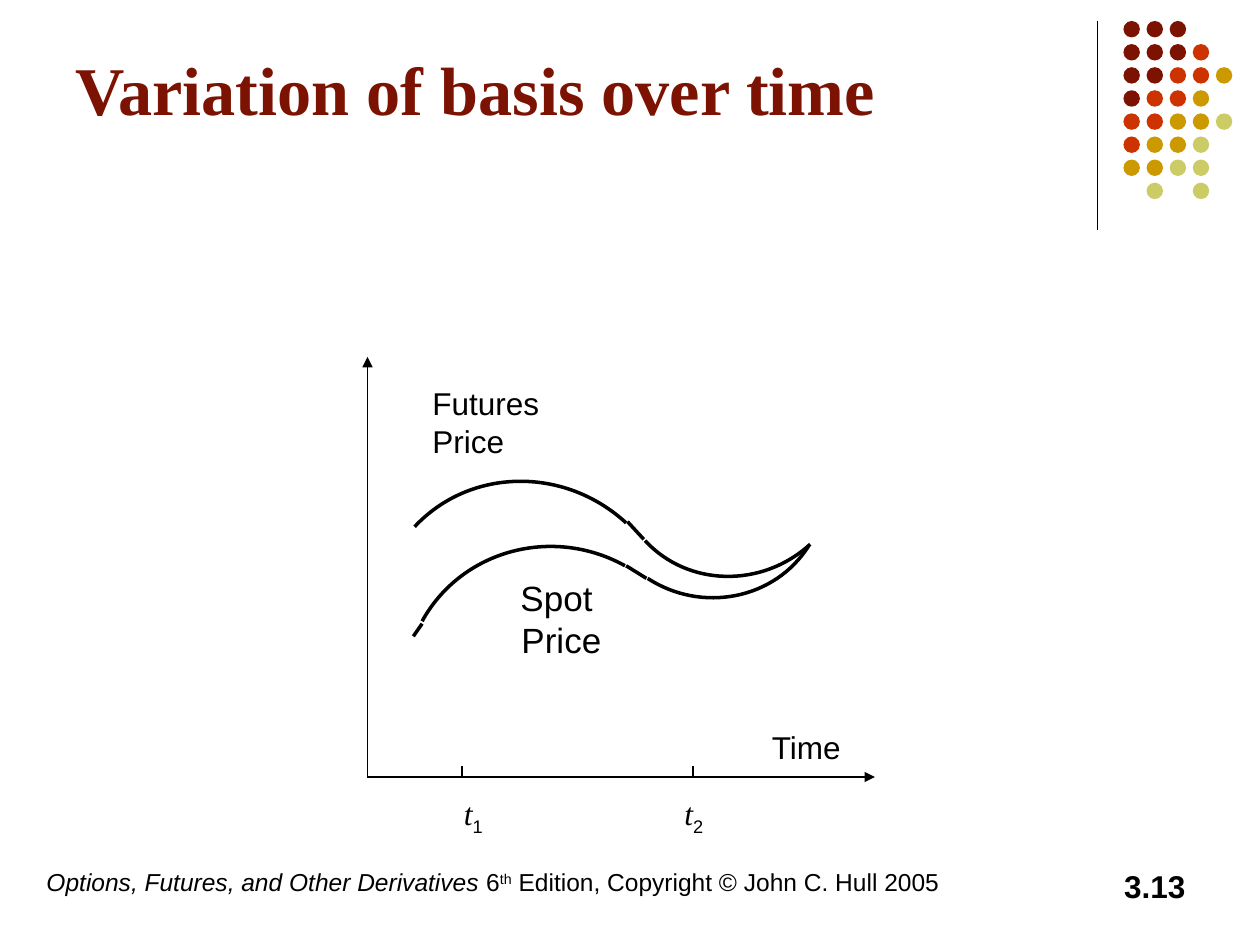
from lxml.etree import SubElement
from pptx import Presentation
from pptx.dml.color import RGBColor
from pptx.enum.shapes import MSO_CONNECTOR, MSO_SHAPE
from pptx.enum.text import MSO_ANCHOR, PP_ALIGN
from pptx.oxml.ns import qn
from pptx.util import Pt

BLACK = RGBColor(0, 0, 0)
MAROON = RGBColor(0x7C, 0x13, 0x02)
RED = RGBColor(0xCC, 0x33, 0x00)
GOLD = RGBColor(0xCC, 0x99, 0x00)
LIME = RGBColor(0xCC, 0xCC, 0x66)

DOTS = ["MMM", "MMMR", "MMRRG", "MRRG", "RRGGL", "RGGL", "GGLL", " L L"]
HUES = {"M": MAROON, "R": RED, "G": GOLD, "L": LIME}

# Each curve: start, two control points, end
CURVES = [
    [(26.9, 97), (58.6, 63.1), (112.6, 62.4), (147.8, 94.8)],
    [(253, 107), (225.6, 132.2), (183.1, 131.5), (158.6, 104.9)],
    [(31.2, 151), (53.5, 110.6), (105.4, 96.2), (147.1, 119.3)],
    [(252.2, 107.8), (232.8, 138.7), (191, 146.6), (160.1, 126.5)],
]
# Short straight pieces that link the curves
LINKS = [
    [(148.6, 94.1), (157.9, 104.2)],
    [(147.8, 119.3), (159.4, 126.5)],
    [(31.2, 152.4), (26.2, 159.6)],
]


def add_line(slide, start, end, width, arrow=False):
    line = slide.shapes.add_connector(
        MSO_CONNECTOR.STRAIGHT, *[Pt(v) for v in (*start, *end)])
    line.line.width = Pt(width)
    line.line.color.rgb = BLACK
    if arrow:
        SubElement(line.line._get_or_add_ln(), qn("a:tailEnd"), type="triangle")
    SubElement(line._element.spPr, qn("a:effectLst"))


def add_curve(slide, points):
    first, *rest = [(Pt(x), Pt(y)) for x, y in points]
    pen = slide.shapes.build_freeform(*first)
    pen.add_line_segments(rest, close=False)
    curve = pen.convert_to_shape()
    curve.shadow.inherit = False
    curve.fill.background()
    curve.line.width = Pt(2)
    curve.line.color.rgb = BLACK
    # Turn the three segments into one Bezier segment
    track = next(curve._element.iter(qn("a:path")))
    bend = SubElement(track, qn("a:cubicBezTo"))
    for seg in track.findall(qn("a:lnTo")):
        bend.append(seg[0])
        track.remove(seg)


def add_text(slide, box, lines, size, align=PP_ALIGN.LEFT, wrap=True):
    """Each line is a list of (text, format) runs."""
    frame = slide.shapes.add_textbox(*[Pt(v) for v in box]).text_frame
    frame.word_wrap = wrap
    for i, runs in enumerate(lines):
        para = frame.paragraphs[0] if i == 0 else frame.add_paragraph()
        para.alignment = align
        for text, style in runs:
            run = para.add_run()
            run.text = text
            run.font.color.rgb = style.get("color", BLACK)
            form = {"name": "Arial", "size": Pt(size), **style}
            for key, value in form.items():
                if key == "base":
                    run.font._element.set("baseline", str(value * 1000))
                elif key != "color":
                    setattr(run.font, key, value)
    return frame


def add_corner(slide, left, top):
    # Rule and dot pattern
    add_line(slide, (left, top), (left, top + 119.5), 0.75)
    pitch, size = 13.2, 9.4
    for row, marks in enumerate(DOTS):
        for col, mark in enumerate(marks):
            if mark == " ":
                continue
            dot = slide.shapes.add_shape(
                MSO_SHAPE.OVAL, Pt(left + 15 + col * pitch),
                Pt(top + row * pitch), Pt(size), Pt(size))
            dot.shadow.inherit = False
            dot.fill.solid()
            dot.fill.fore_color.rgb = HUES[mark]
            dot.line.fill.background()


def add_title(slide, box):
    style = {"name": "Times New Roman", "bold": True, "color": MAROON}
    frame = add_text(slide, box, [[("Variation of basis over time", style)]], 39)
    frame.vertical_anchor = MSO_ANCHOR.MIDDLE
    frame.margin_bottom = Pt(23.6)


def add_footer(slide, left, top):
    add_text(slide, (left, top, 595, 36), [[
        ("Options, Futures, and Other Derivatives", {"italic": True}),
        (" 6", {}), ("th", {"base": 30}),
        (" Edition, Copyright © John C. Hull 2005", {})]], 14)
    add_text(slide, (left + 497, top, 168, 36),
             [[("3.13", {"bold": True})]], 18, PP_ALIGN.RIGHT)


def add_plot(slide, left, top, width, height):
    def at(x, y):
        return left + x, top + y

    # Axes
    add_line(slide, at(0, height), at(0, 0), 1, arrow=True)
    add_line(slide, at(0, height), at(width, height), 1, arrow=True)

    # Price curves
    for points in CURVES:
        add_curve(slide, [at(*p) for p in points])
    for start, end in LINKS:
        add_line(slide, at(*start), at(*end), 2)

    # Labels
    add_text(slide, (*at(224, 208.5), 54, 29), [[("Time", {})]], 18, wrap=False)
    add_text(slide, (*at(65.8, 122), 90, 55),
             [[("Spot ", {})], [("Price", {})]], 20, PP_ALIGN.CENTER)
    add_text(slide, (*at(30, 12), 259, 50),
             [[("Futures", {})], [("Price", {})]], 18)

    # Time marks
    for num, tick, label in (("1", 54, 48), ("2", 186, 174)):
        add_line(slide, at(tick, height), at(tick, height - 6), 1)
        add_text(slide, (*at(label, height + 6), 30, 29), [[
            ("t", {"name": "Times New Roman", "italic": True}),
            (num, {"base": -25})]], 18)


def main():
    deck = Presentation()
    deck.slide_width, deck.slide_height = Pt(720), Pt(540)
    slide = deck.slides.add_slide(deck.slide_layouts[6])
    add_corner(slide, 627, 12)
    add_footer(slide, 19.5, 492)
    add_title(slide, (36, 9.4, 594, 102))
    add_plot(slide, 210, 204, 290, 240)
    deck.save("out.pptx")


if __name__ == "__main__":
    main()
